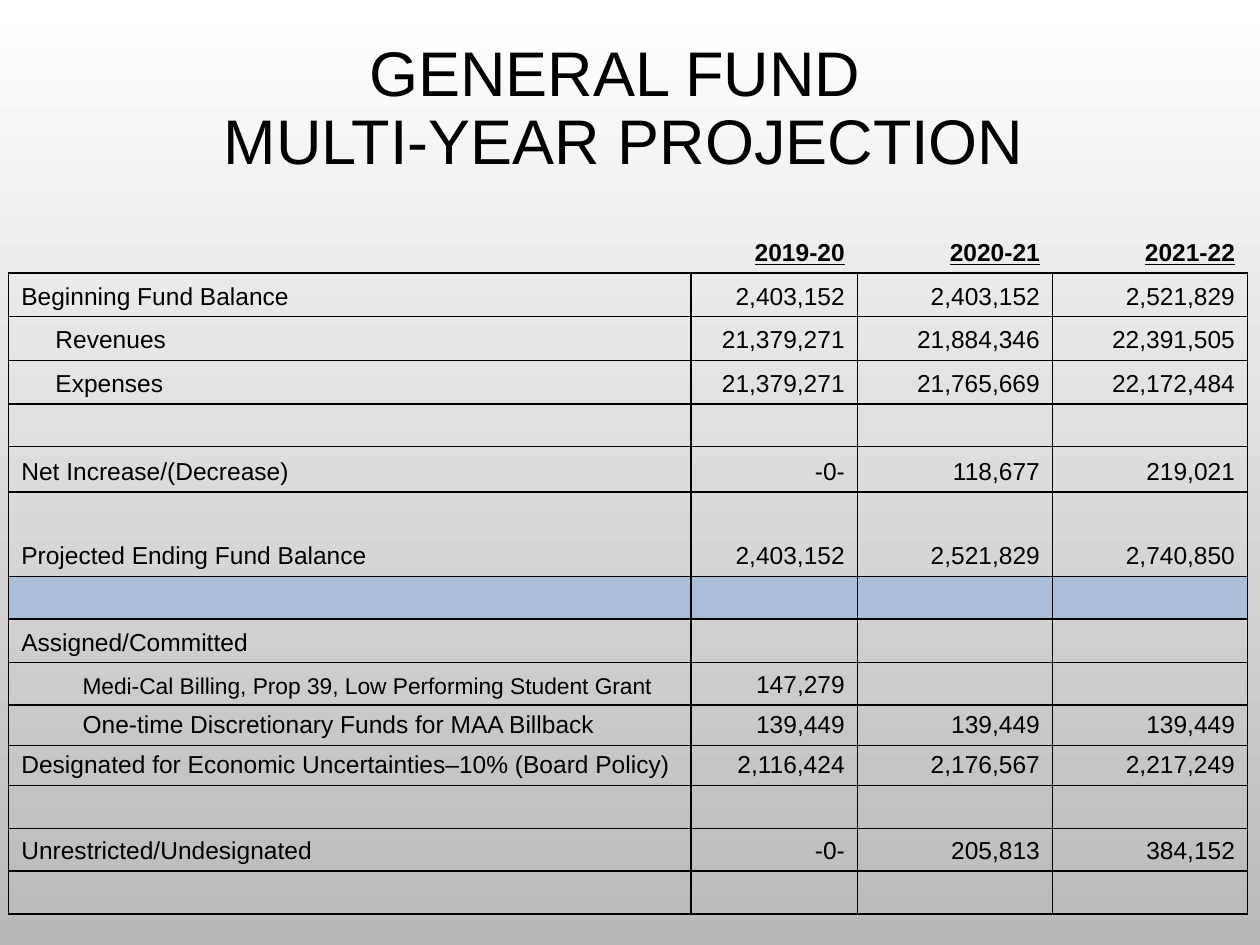
from lxml.etree import SubElement
from pptx import Presentation
from pptx.dml.color import RGBColor
from pptx.enum.text import MSO_ANCHOR, PP_ALIGN
from pptx.oxml.ns import qn
from pptx.util import Pt

BLACK = RGBColor(0, 0, 0)
WHITE = RGBColor(255, 255, 255)
GRAY = RGBColor(0xB9, 0xB9, 0xB9)
BLUE = RGBColor(0xAA, 0xBE, 0xD7)

COLUMN_WIDTHS = [390, 95, 111.5, 111.5]
ROWS = [
    (72, 0, ["", "2019-20", "2020-21", "2021-22"]),
    (25, 0, ["Beginning Fund Balance", "2,403,152", "2,403,152", "2,521,829"]),
    (25, 19.5, ["Revenues", "21,379,271", "21,884,346", "22,391,505"]),
    (25, 19.5, ["Expenses", "21,379,271", "21,765,669", "22,172,484"]),
    (22.9, 0, [""] * 4),
    (26, 0, ["Net Increase/(Decrease)", "-0-", "118,677", "219,021"]),
    (48.3, 0, ["Projected Ending Fund Balance", "2,403,152", "2,521,829", "2,740,850"]),
    (22.9, 0, [""] * 4),
    (25, 0, ["Assigned/Committed", "", "", ""]),
    (22.9, 35, ["Medi-Cal Billing, Prop 39, Low Performing Student Grant", "147,279", "", ""]),
    (22.9, 35, ["One-time Discretionary Funds for MAA Billback", "139,449", "139,449", "139,449"]),
    (22.9, 0, ["Designated for Economic Uncertainties–10% (Board Policy)",
               "2,116,424", "2,176,567", "2,217,249"]),
    (24.5, 0, [""] * 4),
    (24.5, 0, ["Unrestricted/Undesignated", "-0-", "205,813", "384,152"]),
    (24.5, 0, [""] * 4),
]
HEADER_ROW = 0
DIVIDER_ROW = 7
GRANT_ROW = 9


class SlideBuilder:
    body_format = {"name": "Arial", "size": Pt(14), "bold": False, "underline": False}
    header_format = {**body_format, "bold": True, "underline": True}
    grant_format = {**body_format, "size": Pt(13)}
    title_format = {"name": "Arial", "size": Pt(36), "bold": False}

    def __init__(self, presentation):
        self.slide = presentation.slides.add_slide(presentation.slide_layouts[5])

    def apply_format(self, font, values):
        for name, value in values.items():
            setattr(font, name, value)
        font.color.rgb = BLACK

    def background(self, top_color, bottom_color):
        fill = self.slide.background.fill
        fill.gradient()
        fill.gradient_angle = 270
        for stop, position, color in zip(fill.gradient_stops, (0, 1), (top_color, bottom_color)):
            stop.position = position
            stop.color.rgb = color

    def title(self, text, left, top, width, height):
        shape = self.slide.shapes.title
        box = {"left": left, "top": top, "width": width, "height": height}
        for name, value in box.items():
            setattr(shape, name, Pt(value))
        shape.text_frame.vertical_anchor = MSO_ANCHOR.MIDDLE
        shape.text_frame.text = text
        paragraph = shape.text_frame.paragraphs[0]
        paragraph.alignment = PP_ALIGN.CENTER
        paragraph.line_spacing = 0.9
        for run in paragraph.runs:
            self.apply_format(run.font, self.title_format)

    def borders(self, cell, visible_sides):
        properties = cell._tc.get_or_add_tcPr()
        for side in "LRTB":
            line = SubElement(properties, qn(f"a:ln{side}"), w=str(Pt(1)))
            if side in visible_sides:
                fill = SubElement(line, qn("a:solidFill"))
                SubElement(fill, qn("a:srgbClr"), val=str(BLACK))
            else:
                SubElement(line, qn("a:noFill"))

    def cell(self, cell, text, alignment, text_format, indent):
        cell.vertical_anchor = MSO_ANCHOR.BOTTOM
        cell.margin_left = Pt(7.2 + indent)
        paragraph = cell.text_frame.paragraphs[0]
        paragraph.alignment = alignment
        if text:
            run = paragraph.add_run()
            run.text = text
            self.apply_format(run.font, text_format)
        else:
            SubElement(paragraph._p, qn("a:endParaRPr"), sz="1400")

    def table(self, left, top):
        width = sum(COLUMN_WIDTHS)
        height = sum(row[0] for row in ROWS)
        table = self.slide.shapes.add_table(
            len(ROWS), len(COLUMN_WIDTHS), Pt(left), Pt(top), Pt(width), Pt(height)).table
        table.first_row = False
        table.horz_banding = False
        for column, column_width in zip(table.columns, COLUMN_WIDTHS):
            column.width = Pt(column_width)
        for row_index, (row_height, indent, texts) in enumerate(ROWS):
            table.rows[row_index].height = Pt(row_height)
            for column_index, text in enumerate(texts):
                cell = table.cell(row_index, column_index)
                is_label = column_index == 0
                text_format = self.body_format
                if row_index == HEADER_ROW:
                    text_format = self.header_format
                elif row_index == GRANT_ROW and is_label:
                    text_format = self.grant_format
                self.borders(cell, "B" if row_index == HEADER_ROW else "LRTB")
                if row_index == DIVIDER_ROW:
                    cell.fill.solid()
                    cell.fill.fore_color.rgb = BLUE
                else:
                    cell.fill.background()
                self.cell(cell, text, PP_ALIGN.LEFT if is_label else PP_ALIGN.RIGHT,
                          text_format, indent if is_label else 0)


def main():
    presentation = Presentation()
    presentation.slide_width = Pt(720)
    presentation.slide_height = Pt(540)
    builder = SlideBuilder(presentation)
    builder.background(WHITE, GRAY)
    builder.title("GENERAL FUND \vMULTI-YEAR PROJECTION", 5.5, 18, 702, 90)
    builder.table(5, 84)
    presentation.save("out.pptx")


if __name__ == "__main__":
    main()
